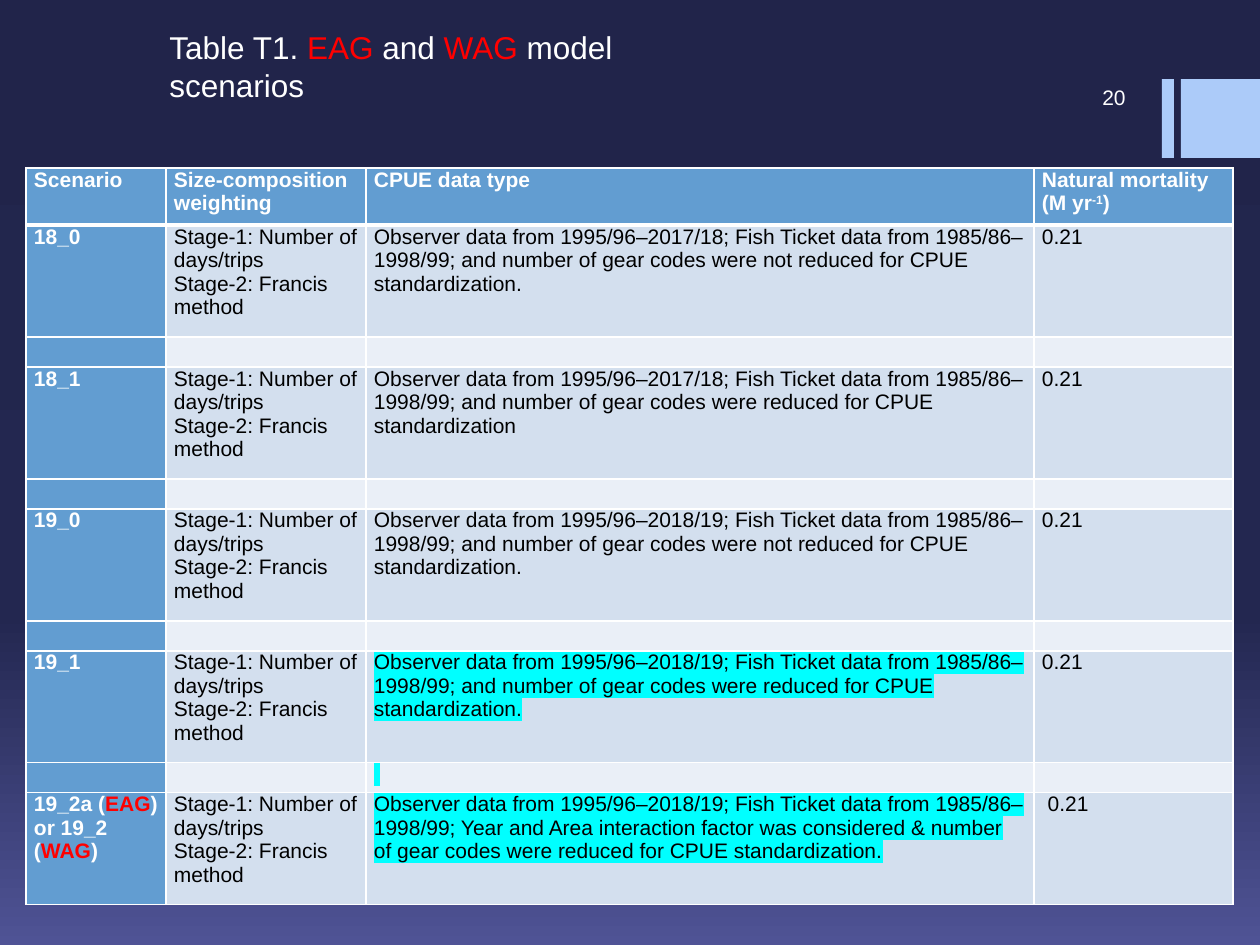
"""Build the slide with the table of model scenarios."""
from copy import deepcopy

from lxml import etree
from pptx import Presentation
from pptx import util as u
from pptx.dml.color import RGBColor
from pptx.enum import shapes, text
from pptx.oxml import ns

WHITE = RGBColor(0xFF, 0xFF, 0xFF)
BLACK = RGBColor(0x00, 0x00, 0x00)
RED = RGBColor(0xFF, 0x00, 0x00)
CYAN = RGBColor(0x00, 0xFF, 0xFF)
ACCENT = RGBColor(0xAC, 0xCB, 0xF9)
HEADER = RGBColor(0x62, 0x9D, 0xD1)
BAND = RGBColor(0xD3, 0xDF, 0xEE)
GAP = RGBColor(0xEA, 0xEF, 0xF7)
BACKDROP = (
    (0, RGBColor(0x21, 0x24, 0x4A)),
    (0.65, RGBColor(0x23, 0x27, 0x50)),
    (1, RGBColor(0x4F, 0x53, 0x95)),
)

SCALE = 914400 / 126
COLUMNS = (140, 200, 668, 199)
HEADER_HEIGHT, ROW_HEIGHT, GAP_HEIGHT = 57, 112, 30

LABEL = {"name": "Arial", "size": u.Pt(12), "color": WHITE, "bold": True}
BODY = {**LABEL, "color": BLACK, "bold": False}
MARKED = {**BODY, "highlight": CYAN}
NUMBER = {**BODY, "color": WHITE}
TITLE = {**NUMBER, "size": u.Pt(18)}

HEADINGS = (
    ["Scenario"],
    ["Size-composition weighting"],
    ["CPUE data type"],
    ["Natural mortality (M yr", ("-1", {"baseline": 30000}), ")"],
)
WEIGHTING = (["Stage-1: Number of days/trips"], ["Stage-2: Francis method"])
OBSERVER = "Observer data from 1995/96–{}; Fish Ticket data from 1985/86–1998/99; {} for CPUE standardization{}"
KEPT = "and number of gear codes were not reduced"
REDUCED = "and number of gear codes were reduced"
INTERACTION = "Year and Area interaction factor was considered & number of gear codes were reduced"
EAG = ("EAG", {"color": RED})
WAG = ("WAG", {"color": RED})
SCENARIOS = (
    (["18_0"], ("2017/18", KEPT, "."), BODY, "0.21"),
    (["18_1"], ("2017/18", REDUCED, ""), BODY, "0.21"),
    (["19_0"], ("2018/19", KEPT, "."), BODY, "0.21"),
    (["19_1"], ("2018/19", REDUCED, "."), MARKED, "0.21"),
    (["19_2a (", EAG, ") or 19_2 (", WAG, ")"], ("2018/19", INTERACTION, "."), MARKED, " 0.21"),
)


def px(length):
    """Turn pixels into EMU."""
    return u.Emu(round(length * SCALE))


def set_attributes(target, values):
    """Set each named attribute of an object."""
    for name, value in values.items():
        setattr(target, name, value)


def add_span(para, words, style):
    """Add one formatted run to a paragraph."""
    values = dict(style)
    color = values.pop("color")
    highlight = values.pop("highlight", None)
    baseline = values.pop("baseline", None)
    span = para.add_run()
    span.text = words
    set_attributes(span.font, values)
    span.font.color.rgb = color
    properties = span._r.get_or_add_rPr()
    if baseline:
        properties.set("baseline", str(baseline))
    if highlight:
        mark = etree.Element(ns.qn("a:highlight"))
        etree.SubElement(mark, ns.qn("a:srgbClr"), val=str(highlight))
        properties.find(ns.qn("a:solidFill")).addnext(mark)


def write(frame, paragraphs, style, align=text.PP_ALIGN.LEFT):
    """Fill a text frame with paragraphs made of plain or styled spans."""
    for index, spans in enumerate(paragraphs):
        para = frame.add_paragraph() if index else frame.paragraphs[0]
        para.alignment = align
        for span in spans:
            words, change = (span, {}) if isinstance(span, str) else span
            add_span(para, words, {**style, **change})


def paint_background(page):
    """Give the page a vertical gradient of three stops."""
    fill = page.background.fill
    fill.gradient()
    fill.gradient_angle = 270
    stop_list = page.element.find(".//" + ns.qn("a:gsLst"))
    stop_list.append(deepcopy(stop_list[0]))
    for stop, (position, color) in zip(fill.gradient_stops, BACKDROP):
        stop.position = position
        stop.color.rgb = color


def add_block(page, left, top, width, height):
    """Add a plain accent rectangle."""
    block = page.shapes.add_shape(
        shapes.MSO_SHAPE.RECTANGLE, px(left), px(top), px(width), px(height))
    block.shadow.inherit = False
    block.fill.solid()
    block.fill.fore_color.rgb = ACCENT
    block.line.fill.background()


def add_text(page, bounds, spans, style, values, align=text.PP_ALIGN.LEFT):
    """Add a wrapping text box with one paragraph."""
    box = page.shapes.add_textbox(*map(px, bounds))
    set_attributes(box.text_frame, {"word_wrap": True, **values})
    write(box.text_frame, [spans], style, align)


def add_borders(cell, widths):
    """Draw white lines on the sides of a cell."""
    properties = cell._tc.get_or_add_tcPr()
    for side, points in widths.items():
        line = etree.SubElement(properties, ns.qn("a:ln" + side), w=str(u.Pt(points)))
        fill = etree.SubElement(line, ns.qn("a:solidFill"))
        etree.SubElement(fill, ns.qn("a:srgbClr"), val=str(WHITE))


def format_cell(cell, color, top, bottom):
    """Set the margins, borders and fill of a cell."""
    margins = {"margin_left": px(8), "margin_right": px(8), "margin_top": 0, "margin_bottom": 0}
    set_attributes(cell, margins)
    add_borders(cell, {"L": 1, "R": 1, "T": top, "B": bottom})
    cell.fill.solid()
    cell.fill.fore_color.rgb = color


def table_rows():
    """List each row as its height, band colour and four cells of paragraphs and style."""
    rows = [(HEADER_HEIGHT, HEADER, [([spans], LABEL) for spans in HEADINGS])]
    for index, (label, data, style, mortality) in enumerate(SCENARIOS):
        if index:
            filler = [([" "], MARKED)] if index == len(SCENARIOS) - 1 else [([], BODY)]
            rows.append((GAP_HEIGHT, GAP, [([], LABEL), ([], BODY), *filler, ([], BODY)]))
        rows.append((ROW_HEIGHT, BAND, [
            ([label], LABEL), (WEIGHTING, BODY),
            ([[OBSERVER.format(*data)]], style), ([[mortality]], BODY)]))
    return rows


def add_scenario_table(page, left, top):
    """Add the table of scenarios."""
    rows = table_rows()
    height = sum(row[0] for row in rows)
    table = page.shapes.add_table(
        len(rows), len(COLUMNS), px(left), px(top), px(sum(COLUMNS)), px(height)).table
    set_attributes(table, {"first_row": False, "horz_banding": False})
    for column, width in zip(table.columns, COLUMNS):
        column.width = px(width)
    for index, (height, band, contents) in enumerate(rows):
        table.rows[index].height = px(height)
        for column, (paragraphs, style) in enumerate(contents):
            cell = table.cell(index, column)
            format_cell(cell, band if column else HEADER,
                        3 if index == 1 else 1, 1 if index else 3)
            justified = column == 0 and index < len(rows) - 1
            align = text.PP_ALIGN.JUSTIFY if justified else text.PP_ALIGN.LEFT
            write(cell.text_frame, paragraphs, style, align)
            if not paragraphs:
                etree.SubElement(cell.text_frame.paragraphs[0]._p,
                                 ns.qn("a:endParaRPr"), sz="1200")


def main():
    """Build and save the deck."""
    deck = Presentation()
    set_attributes(deck, {"slide_width": px(1260), "slide_height": px(945)})
    page = deck.slides.add_slide(deck.slide_layouts[6])
    paint_background(page)
    add_block(page, 1162, 79, 12, 79)
    add_block(page, 1181, 79, 79, 79)
    add_text(page, (1008, 76, 130, 42), ["20"], NUMBER,
             {"vertical_anchor": text.MSO_ANCHOR.MIDDLE}, text.PP_ALIGN.RIGHT)
    add_text(page, (157, 22, 525, 89), ["Table T1. ", EAG, " and ", WAG, " model scenarios"],
             TITLE, {"auto_size": text.MSO_AUTO_SIZE.SHAPE_TO_FIT_TEXT})
    add_scenario_table(page, 26, 168)
    deck.save("out.pptx")


if __name__ == "__main__":
    main()
